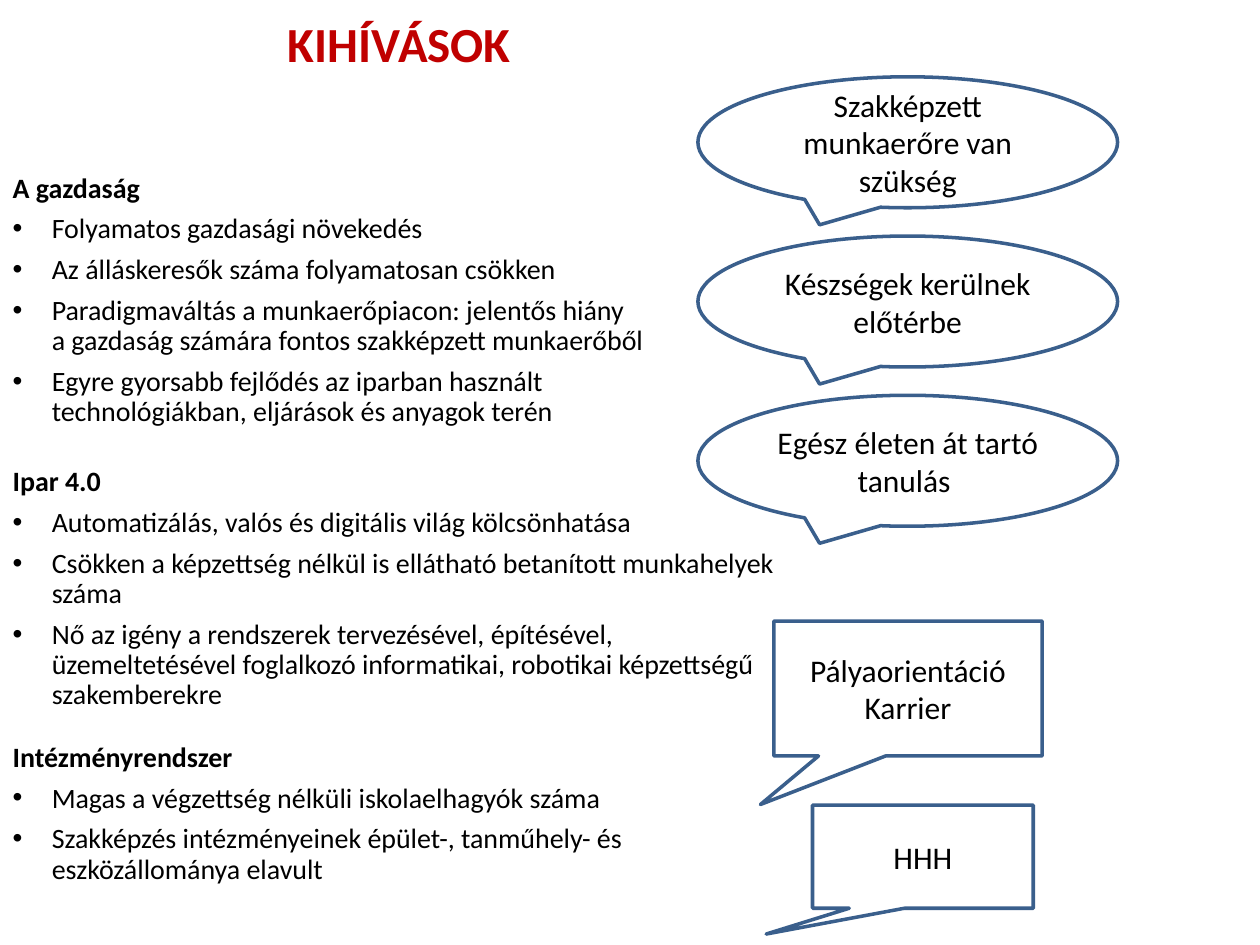
"""Build the KIHÍVÁSOK slide: challenges on the left, callouts on the right."""
from lxml import etree
from pptx import Presentation
from pptx.dml.color import RGBColor
from pptx.enum.shapes import MSO_SHAPE
from pptx.enum.text import MSO_ANCHOR, MSO_AUTO_SIZE, PP_ALIGN
from pptx.oxml.ns import qn
from pptx.util import Cm, Pt

ELLIPSE = MSO_SHAPE.OVAL_CALLOUT
RECTANGLE = MSO_SHAPE.RECTANGULAR_CALLOUT
CENTER, LEFT = PP_ALIGN.CENTER, PP_ALIGN.LEFT
TOP, MIDDLE = MSO_ANCHOR.TOP, MSO_ANCHOR.MIDDLE
NO_AUTOFIT = MSO_AUTO_SIZE.NONE


def rgb(code):
    return RGBColor.from_string(code)


def write(paragraph, text, size=18, color="000000", bold=False, align=CENTER,
          before=0, after=0, line=1.0):
    paragraph.text = text
    paragraph.alignment = align
    paragraph.space_before, paragraph.space_after = Pt(before), Pt(after)
    paragraph.line_spacing = line
    for run in paragraph.runs:
        run.font.name, run.font.size, run.font.bold = "Calibri", Pt(size), bold
        run.font.color.rgb = rgb(color)
    for line_break in paragraph._p.findall(qn("a:br")):
        etree.SubElement(line_break, qn("a:rPr"), sz=str(size * 100))


sections = [
    ("A gazdaság", 0, [
        "Folyamatos gazdasági növekedés",
        "Az álláskeresők száma folyamatosan csökken",
        "Paradigmaváltás a munkaerőpiacon: jelentős hiány \n"
        "a gazdaság számára fontos szakképzett munkaerőből",
        "Egyre gyorsabb fejlődés az iparban használt \n"
        "technológiákban, eljárások és anyagok terén",
    ]),
    ("Ipar 4.0", 17, [
        "Automatizálás, valós és digitális világ kölcsönhatása",
        "Csökken a képzettség nélkül is ellátható betanított munkahelyek száma",
        "Nő az igény a rendszerek tervezésével, építésével, üzemeltetésével "
        "foglalkozó informatikai, robotikai képzettségű szakemberekre",
    ]),
    ("Intézményrendszer", 12.5, [
        "Magas a végzettség nélküli iskolaelhagyók száma",
        "Szakképzés intézményeinek épület-, tanműhely- és eszközállománya elavult",
    ]),
]
needs = ["Szakképzett munkaerőre van szükség", "Készségek kerülnek előtérbe",
         "Egész életen át tartó tanulás "]

presentation = Presentation()
presentation.slide_width, presentation.slide_height = Cm(25.4), Cm(19.05)
slide = presentation.slides.add_slide(presentation.slide_layouts[1])

title, challenges = slide.placeholders
for placeholder, top, height, anchor in [(title, 0, 1.73, MIDDLE),
                                         (challenges, 3.38, 15.67, TOP)]:
    placeholder.left, placeholder.top = Cm(0), Cm(top)
    placeholder.width, placeholder.height = Cm(16.1), Cm(height)
    placeholder.fill.solid()
    placeholder.fill.fore_color.rgb = rgb("FFFFFF")
    placeholder.text_frame.auto_size = NO_AUTOFIT
    placeholder.text_frame.vertical_anchor = anchor
write(title.text_frame.paragraphs[0], "KIHÍVÁSOK", size=28, color="C00000", bold=True)

paragraph = challenges.text_frame.paragraphs[0]
for heading, gap, points in sections:
    for index, text in enumerate([heading, *points]):
        is_heading = index == 0
        if paragraph is None:
            paragraph = challenges.text_frame.add_paragraph()
        write(paragraph, text, size=16, bold=is_heading, align=LEFT,
              before=gap if is_heading else 0, after=6, line=0.9)
        properties = paragraph._p.get_or_add_pPr()
        indent = 0 if is_heading else Cm(0.79)
        properties.set("marL", str(indent))
        properties.set("indent", str(-indent))
        if is_heading:
            etree.SubElement(properties, qn("a:buNone"))
        else:
            etree.SubElement(properties, qn("a:buFont"), typeface="Arial")
            etree.SubElement(properties, qn("a:buChar"), char="•")
        paragraph = None

callouts = [(ELLIPSE, 14.07, 1.55 + 3.21 * row, 8.46, 2.64, (-0.21, 0.63), [need])
            for row, need in enumerate(needs)]
callouts += [
    (RECTANGLE, 15.6, 12.52, 5.41, 2.72, (-0.55, 0.86), ["Pályaorientáció", "Karrier"]),
    (RECTANGLE, 16.38, 16.23, 4.45, 2.08, (-0.71, 0.75), ["HHH"]),
]
for outline, left, top, width, height, tip, lines in callouts:
    callout = slide.shapes.add_shape(outline, Cm(left), Cm(top), Cm(width), Cm(height))
    callout.adjustments[0], callout.adjustments[1] = tip
    callout.shadow.inherit = False
    callout.fill.solid()
    callout.fill.fore_color.rgb = rgb("FFFFFF")
    callout.line.color.rgb = rgb("3A5F8C")
    callout.line.width = Pt(2)
    frame = callout.text_frame
    frame.word_wrap, frame.vertical_anchor = True, MIDDLE
    for index, text in enumerate(lines):
        write(frame.add_paragraph() if index else frame.paragraphs[0], text)

presentation.save("out.pptx")
